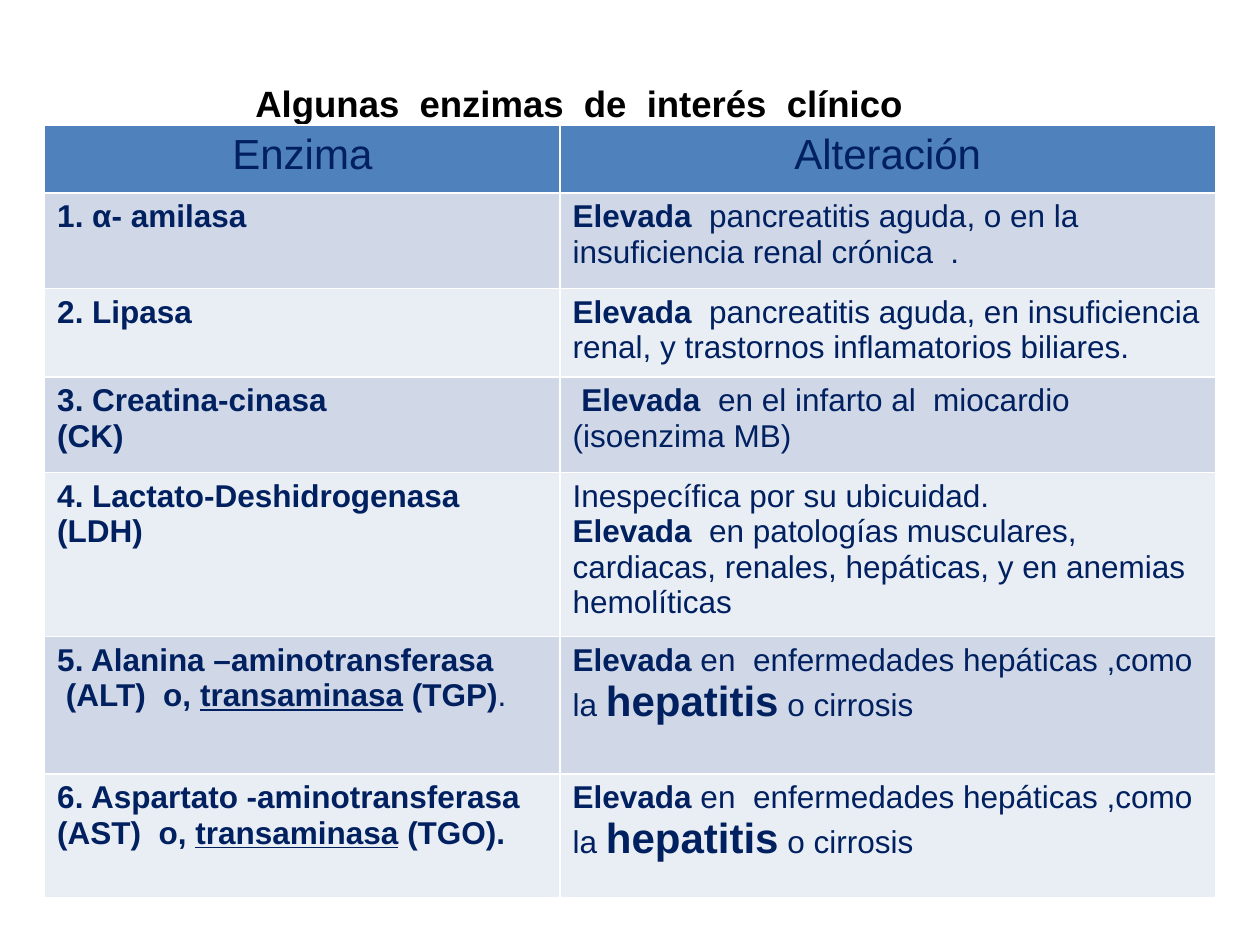
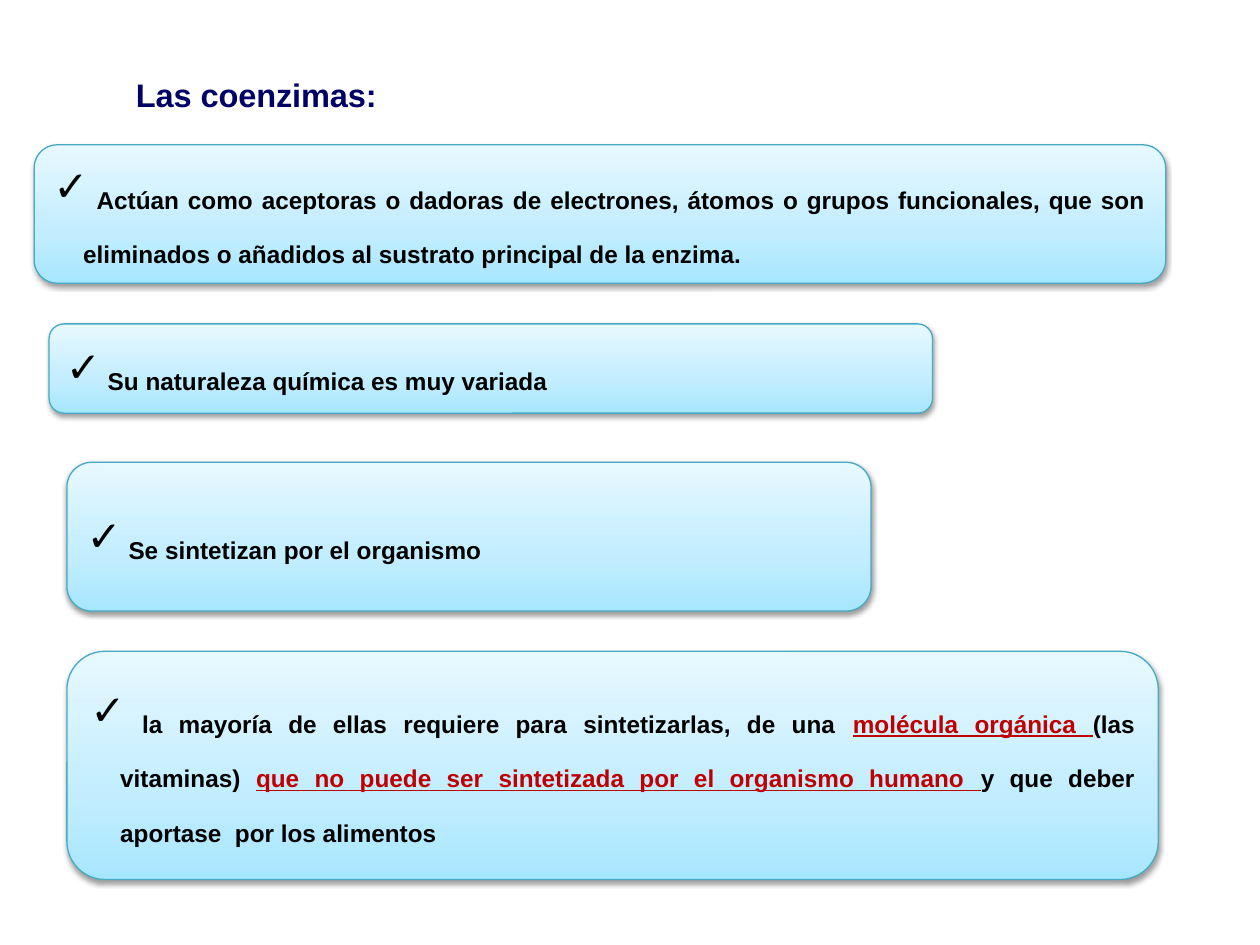
"""Two slides on clinical enzymes and coenzymes."""
from lxml import etree
from pptx import Presentation
from pptx.dml.color import RGBColor
from pptx.enum.shapes import MSO_SHAPE
from pptx.enum.text import MSO_ANCHOR, PP_ALIGN
from pptx.oxml import parse_xml
from pptx.oxml.ns import qn
from pptx.util import Cm, Pt

ROUND = MSO_SHAPE.ROUNDED_RECTANGLE
TOP, MIDDLE = MSO_ANCHOR.TOP, MSO_ANCHOR.MIDDLE
CENTER, LEFT, JUSTIFY = PP_ALIGN.CENTER, PP_ALIGN.LEFT, PP_ALIGN.JUSTIFY
NS = 'xmlns:a="http://schemas.openxmlformats.org/drawingml/2006/main"'
FONT = "Arial"
COLORS = {
    "black": "000000", "title": "000066", "cell": "002060", "red": "C00000",
    "head": "4F81BD", "odd": "D0D8E8", "even": "E9EDF4",
    "edge": "46AAC5", "low": "A7E6FF", "mid": "C1EDFF", "high": "E7F8FF",
}


def rgb(name):
    return RGBColor.from_string(COLORS[name])


def add_run(par, text, size, color, bold=True, under=False, drop=True):
    run = par.add_run()
    run.text = text
    font = run.font
    font.name, font.size, font.bold = FONT, Pt(size), bold
    font.color.rgb = rgb(color)
    if under:
        font.underline = True
    if drop:
        run._r.get_or_add_rPr().set("baseline", "-18000")


prs = Presentation()
prs.slide_width, prs.slide_height = Cm(25.4), Cm(19.05)
blank = prs.slide_layouts[6]

titles = [
    ("Algunas  enzimas  de  interés  clínico", 36, "black", (4.9, 0.74, 15.9, 1.27)),
    ("Las coenzimas:", 32, "title", (2.49, 0.71, 9.3, 1.63)),
]
slides = []
for text, size, color, place in titles:
    slide = prs.slides.add_slide(blank)
    frame = slide.shapes.add_textbox(*map(Cm, place)).text_frame
    frame.word_wrap = True
    add_run(frame.paragraphs[0], text, size, color)
    slides.append(slide)

liver = [[("Elevada ", "b"), ("en  enfermedades hepáticas ,como la ", ""),
          ("hepatitis", "bh"), (" o cirrosis", "")]]
rows = [
    (1.37, [[("Enzima", "h")]], [[("Alteración", "h")]]),
    (1.93, [[("1. α- a", "b"), ("milasa", "b")]],
     [[("Elevada  ", "b"),
       ("pancreatitis aguda, o en la insuficiencia renal crónica  .", "")]]),
    (1.75, [[("2. Lipasa", "b")]],
     [[("Elevada  ", "b"),
       ("pancreatitis aguda, en insuficiencia renal, y trastornos inflamatorios biliares.", "")]]),
    (1.93, [[("3. Creatina-cinasa", "b")], [("(CK)", "b")]],
     [[(" Elevada  ", "b"), ("en el infarto al  miocardio (isoenzima MB)", "")]]),
    (2.36, [[("4. Lactato-Deshidrogenasa", "b")], [("(LDH)", "b")]],
     [[("Inespecífica por su ubicuidad.", "")],
      [("Elevada  ", "b"),
       ("en patologías musculares, cardiacas, renales, hepáticas, y en anemias hemolíticas", "")]]),
    (2.77, [[("5. Alanina –aminotransferasa", "b")],
            [(" (ALT)  o, ", "b"), ("transaminasa", "bu"), (" (TGP)", "b"), (".", "")]], liver),
    (2.49, [[("6. Aspartato -aminotransferasa (AST)  o, ", "b"),
             ("transaminasa", "bu"), (" (TGO).", "b")]], liver),
]
high = sum(row[0] for row in rows)
table = slides[0].shapes.add_table(
    len(rows), 2, Cm(0.9), Cm(2.52), Cm(23.6), Cm(high)).table
for col, width in zip(table.columns, (10.39, 13.21)):
    col.width = Cm(width)
for i, (height, *cells) in enumerate(rows):
    table.rows[i].height = Cm(height)
    shade = "head" if i == 0 else "odd" if i % 2 else "even"
    for j, lines in enumerate(cells):
        cell = table.cell(i, j)
        cell.fill.solid()
        cell.fill.fore_color.rgb = rgb(shade)
        cell.vertical_anchor = TOP
        frame = cell.text_frame
        for k, line in enumerate(lines):
            par = frame.add_paragraph() if k else frame.paragraphs[0]
            par.alignment = CENTER if i == 0 else LEFT
            for text, style in line:
                add_run(par, text, 24 if "h" in style else 18, "cell",
                        "b" in style, "u" in style, False)

cards = [
    ((0.69, 2.92, 22.81, 2.79),
     [(" Actúan como aceptoras o dadoras de electrones, átomos o grupos funcionales, "
       "que son eliminados o añadidos al sustrato principal de la enzima.", False)]),
    ((0.99, 6.53, 17.81, 1.8), [(" Su naturaleza química es muy variada", False)]),
    ((1.35, 9.32, 16.21, 3), [(" Se sintetizan por el organismo", False)]),
    ((1.35, 13.13, 22, 4.6),
     [(" la mayoría de ellas requiere para sintetizarlas, de una ", False),
      ("molécula orgánica ", True), ("(las vitaminas) ", False),
      ("que no puede ser sintetizada por el organismo humano ", True),
      ("y que deber aportase  por los alimentos", False)]),
]
stops = "".join(
    f'<a:gs pos="{pos}000"><a:srgbClr val="{COLORS[name]}"/></a:gs>'
    for pos, name in ((0, "low"), (35, "mid"), (100, "high")))
grad = (f'<a:gradFill {NS} rotWithShape="1"><a:gsLst>{stops}</a:gsLst>'
        '<a:lin ang="16200000" scaled="1"/></a:gradFill>')
shade = (f'<a:outerShdw {NS} blurRad="{Pt(3.1)}" dist="{Pt(1.6)}" dir="5400000" '
         f'rotWithShape="0"><a:srgbClr val="{COLORS["black"]}">'
         '<a:alpha val="38000"/></a:srgbClr></a:outerShdw>')
for place, runs in cards:
    card = slides[1].shapes.add_shape(ROUND, *map(Cm, place))
    card.line.color.rgb = rgb("edge")
    card.line.width = Pt(0.75)
    card.shadow.inherit = False
    props = card._element.spPr
    props.find(qn("a:prstGeom")).addnext(parse_xml(grad))
    props.find(qn("a:effectLst")).append(parse_xml(shade))
    frame = card.text_frame
    frame.word_wrap = True
    frame.vertical_anchor = MIDDLE
    par = frame.paragraphs[0]
    par.alignment = JUSTIFY
    form = par._p.get_or_add_pPr()
    form.set("marL", str(Cm(0.6)))
    form.set("indent", str(Cm(-0.6)))
    etree.SubElement(form, qn("a:buFont"), typeface=FONT)
    etree.SubElement(form, qn("a:buChar"), char="✓")
    for text, key in runs:
        add_run(par, text, 24, "red" if key else "black", under=key)

prs.save("out.pptx")
